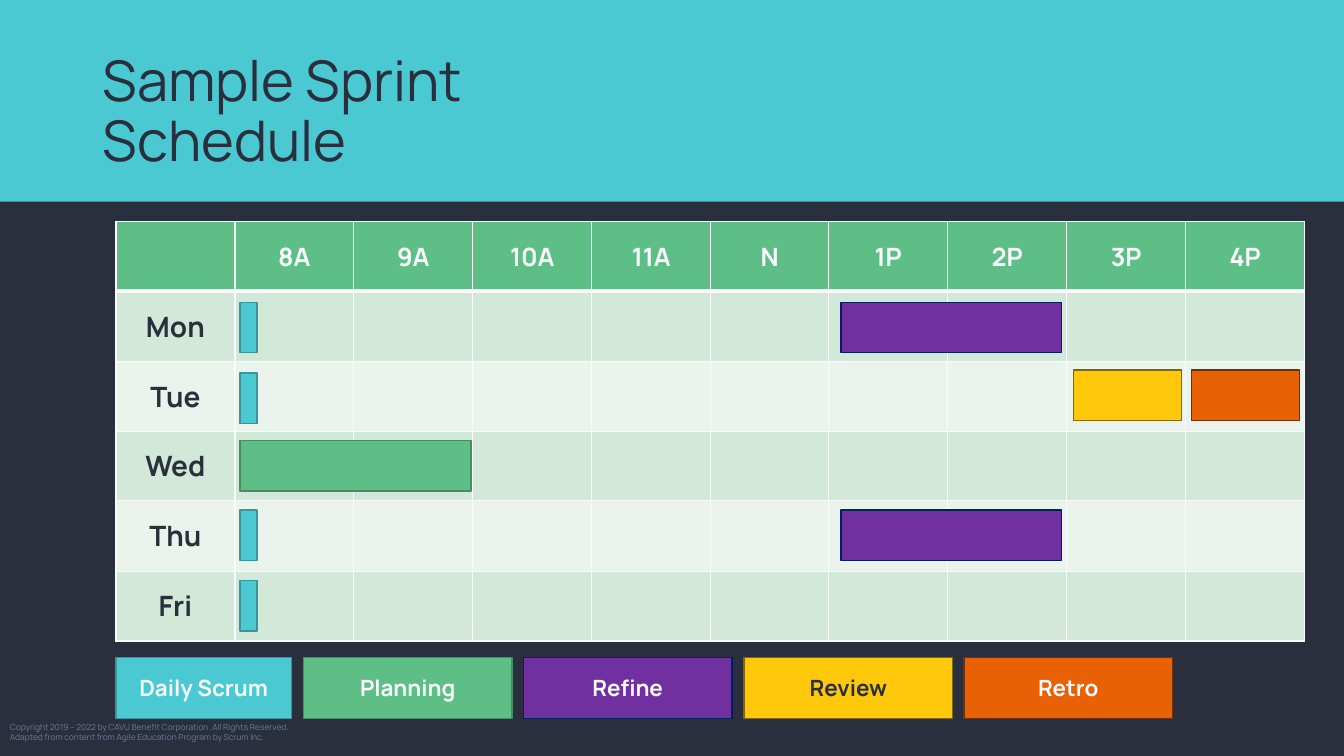
from dataclasses import dataclass

from lxml.etree import SubElement
from pptx import Presentation
from pptx.dml.color import RGBColor
from pptx.enum.shapes import MSO_SHAPE
from pptx.enum.text import MSO_ANCHOR as Anchor, PP_ALIGN as Align
from pptx.oxml.ns import qn
from pptx.shapes.autoshape import Shape
from pptx.slide import Slide
from pptx.table import _Cell as Cell
from pptx.text.text import TextFrame
from pptx.util import Emu, Pt

PX = 9144  # EMU per px, 100 px to the inch
FONT = "Manrope"

DARK = RGBColor(0x2A, 0x2F, 0x3D)
LIGHT = RGBColor(0xFA, 0xFB, 0xFD)
MUTED = RGBColor(0x6E, 0x7A, 0x9B)
TEAL = RGBColor(0x4B, 0xC9, 0xD3)
TEAL_EDGE = RGBColor(0x37, 0x95, 0x9C)
GREEN = RGBColor(0x5E, 0xBF, 0x86)
GREEN_EDGE = RGBColor(0x46, 0x8D, 0x63)
PURPLE = RGBColor(0x70, 0x30, 0xA0)
NAVY = RGBColor(0x00, 0x20, 0x60)
YELLOW = RGBColor(0xFF, 0xC8, 0x0A)
YELLOW_EDGE = RGBColor(0x84, 0x67, 0x00)
ORANGE = RGBColor(0xE8, 0x61, 0x04)
ORANGE_EDGE = RGBColor(0x74, 0x30, 0x02)
BAND_DARK = RGBColor(0xD2, 0xE8, 0xD9)
BAND_LIGHT = RGBColor(0xEA, 0xF4, 0xED)

HOURS = ["8A", "9A", "10A", "11A", "N", "1P", "2P", "3P", "4P"]
DAYS = ["Mon", "Tue", "Wed", "Thu", "Fri"]


@dataclass(frozen=True)
class Box:
    left: int
    top: int
    width: int
    height: int

    def emu(self) -> tuple[Emu, Emu, Emu, Emu]:
        return (Emu(self.left * PX), Emu(self.top * PX),
                Emu(self.width * PX), Emu(self.height * PX))


@dataclass(frozen=True)
class Event:
    name: str
    fill: RGBColor
    edge: RGBColor
    legend_left: int
    legend_width: int
    bars: list[Box]
    text_color: RGBColor = LIGHT


BAR_HEIGHT = 50
EVENTS = [
    Event("Daily Scrum", TEAL, TEAL_EDGE, 115, 174,
          [Box(238, top, 17, BAR_HEIGHT) for top in (300, 370, 506, 576)]),
    Event("Planning", GREEN, GREEN_EDGE, 301, 207, [Box(238, 437, 229, BAR_HEIGHT)]),
    Event("Refine", PURPLE, NAVY, 519, 207,
          [Box(834, top, 219, BAR_HEIGHT) for top in (300, 506)]),
    Event("Review", YELLOW, YELLOW_EDGE, 738, 207, [Box(1065, 367, 107, BAR_HEIGHT)], DARK),
    Event("Retro", ORANGE, ORANGE_EDGE, 956, 207, [Box(1182, 367, 107, BAR_HEIGHT)]),
]


def format_text(text_frame: TextFrame, size: int, color: RGBColor, bold: bool = False,
                align: Align = Align.LEFT) -> None:
    for paragraph in text_frame.paragraphs:
        paragraph.alignment = align
        for run in paragraph.runs:
            run.font.name = FONT
            run.font.size = Pt(size)
            run.font.bold = bold
            run.font.color.rgb = color


def add_rectangle(slide: Slide, box: Box, fill: RGBColor,
                  edge: RGBColor | None = None) -> Shape:
    shape = slide.shapes.add_shape(MSO_SHAPE.RECTANGLE, *box.emu())
    shape.shadow.inherit = False
    shape.fill.solid()
    shape.fill.fore_color.rgb = fill
    if edge is None:
        shape.line.fill.background()
    else:
        shape.line.color.rgb = edge
        shape.line.width = Pt(1)
    return shape


def add_text(slide: Slide, box: Box, size: int, color: RGBColor) -> TextFrame:
    text_frame = slide.shapes.add_textbox(*box.emu()).text_frame
    text_frame.word_wrap = True
    return text_frame


def split_evenly(total: int, count: int) -> list[Emu]:
    edges = [round(total * index / count) for index in range(count + 1)]
    return [Emu((end - start) * PX) for start, end in zip(edges, edges[1:])]


def set_borders(cell: Cell, top: int, bottom: int) -> None:
    properties = cell._tc.get_or_add_tcPr()
    for tag, points in (("a:lnL", 1), ("a:lnR", 1), ("a:lnT", top), ("a:lnB", bottom)):
        line = SubElement(properties, qn(tag), w=str(Pt(points)))
        SubElement(SubElement(line, qn("a:solidFill")), qn("a:srgbClr"), val=str(LIGHT))


def add_schedule(slide: Slide, box: Box) -> None:
    rows = [["", *HOURS]] + [[day] + [""] * len(HOURS) for day in DAYS]
    table = slide.shapes.add_table(len(rows), len(rows[0]), *box.emu()).table
    for column, width in zip(table.columns, split_evenly(box.width, len(rows[0]))):
        column.width = width
    for row, height in zip(table.rows, split_evenly(box.height, len(rows))):
        row.height = height
    for row_index, texts in enumerate(rows):
        is_header = row_index == 0
        band = BAND_DARK if row_index % 2 else BAND_LIGHT
        for column_index, text in enumerate(texts):
            cell = table.cell(row_index, column_index)
            set_borders(cell, top=3 if row_index == 1 else 1, bottom=3 if is_header else 1)
            cell.fill.solid()
            cell.fill.fore_color.rgb = GREEN if is_header else band
            cell.vertical_anchor = Anchor.MIDDLE
            cell.text_frame.text = text
            format_text(cell.text_frame, 18 if is_header else 20,
                        LIGHT if is_header else DARK, True, Align.CENTER)


def add_legend_key(slide: Slide, event: Event) -> None:
    key = Box(event.legend_left, 652, event.legend_width, 61)
    text_frame = add_rectangle(slide, key, event.fill, event.edge).text_frame
    text_frame.text = event.name
    text_frame.vertical_anchor = Anchor.MIDDLE
    format_text(text_frame, 16, event.text_color, True, Align.CENTER)


def main() -> None:
    presentation = Presentation()
    presentation.slide_width = Emu(1333 * PX)
    presentation.slide_height = Emu(750 * PX)
    slide = presentation.slides.add_slide(presentation.slide_layouts[6])
    slide.background.fill.solid()
    slide.background.fill.fore_color.rgb = DARK

    # Header band and copyright
    add_rectangle(slide, Box(0, 0, 1333, 200), TEAL)
    copyright_frame = add_text(slide, Box(0, 711, 450, 30), 6, MUTED)
    copyright_frame.text = (
        "Copyright 2019 – 2022 by CAVU Benefit Corporation .All Rights Reserved.\n"
        "Adapted from content from Agile Education Program by Scrum Inc.")
    format_text(copyright_frame, 6, MUTED)

    # Title
    title_frame = add_text(slide, Box(92, 40, 1150, 145), 40, DARK)
    title_frame.vertical_anchor = Anchor.MIDDLE
    title = title_frame.paragraphs[0]
    title.text = "Sample Sprint\nSchedule"
    title.line_spacing = 0.9
    format_text(title_frame, 40, DARK)

    # Week table, legend and event bars
    add_schedule(slide, Box(115, 220, 1179, 416))
    for event in EVENTS:
        add_legend_key(slide, event)
    for event in EVENTS:
        for bar in event.bars:
            add_rectangle(slide, bar, event.fill, event.edge)

    presentation.save("out.pptx")


if __name__ == "__main__":
    main()
